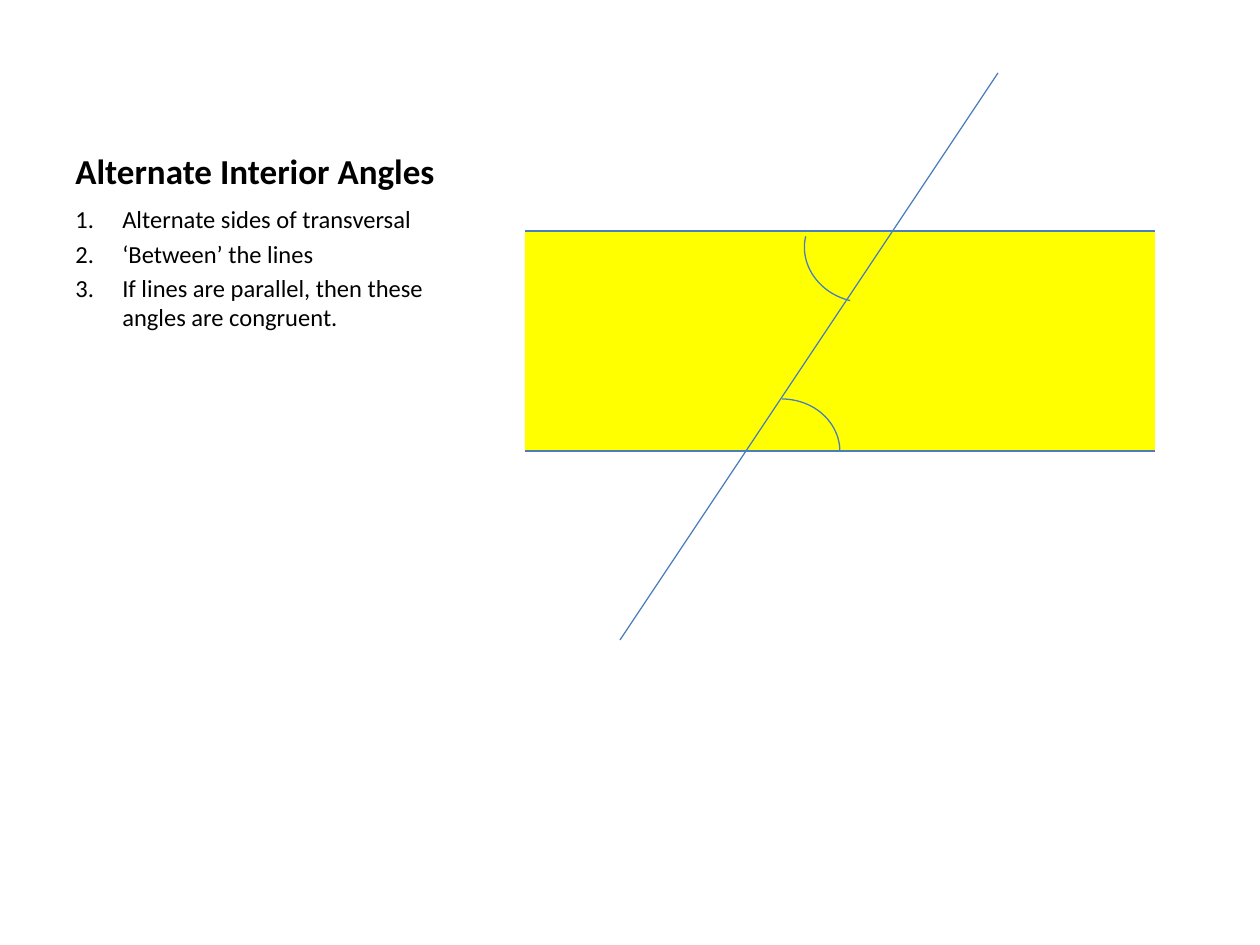
"""Build a slide on alternate interior angles."""
from typing import NamedTuple

from lxml.etree import SubElement
from pptx import Presentation
from pptx.dml.color import RGBColor as Color
from pptx.enum.shapes import MSO_CONNECTOR as Link, MSO_SHAPE as Kind
from pptx.enum.text import MSO_ANCHOR as Anchor
from pptx.oxml.ns import qn
from pptx.util import Emu, Pt

SCALE = 914400 / 126
FONT = "Calibri"
BLACK, BLUE, YELLOW = "000000", "4B7EBC", "FFFF00"
LEFT, RIGHT, TOP, BASE = 525, 1155, 231, 451


class Line(NamedTuple):
    x1: int
    y1: int
    x2: int
    y2: int


class Arc(NamedTuple):
    left: int
    top: int
    turn: float


LINES = [
    Line(LEFT, TOP, RIGHT, TOP),
    Line(LEFT, BASE, RIGHT, BASE),
    Line(620, 640, 998, 73),
]
ARCS = [Arc(724, 399, 0), Arc(804, 197, 193.1)]
RULES = [
    "Alternate sides of transversal",
    "‘Between’ the lines",
    "If lines are parallel, then these angles are congruent.",
]


def px(size: int) -> Emu:
    return Emu(round(size * SCALE))


def paint(code: str) -> Color:
    return Color.from_string(code)


def stroke(shape) -> None:
    shape.line.color.rgb = paint(BLUE)
    shape.line.width = Pt(0.75)


def draw_band(slide) -> None:
    band = slide.shapes.add_shape(
        Kind.RECTANGLE, px(LEFT), px(TOP), px(RIGHT - LEFT), px(BASE - TOP))
    band.shadow.inherit = False
    band.fill.solid()
    band.fill.fore_color.rgb = paint(YELLOW)
    band.line.fill.background()


def draw_line(slide, line: Line) -> None:
    link = slide.shapes.add_connector(Link.STRAIGHT, *map(px, line))
    stroke(link)
    SubElement(link._element.spPr, qn("a:effectLst"))


def draw_arc(slide, arc: Arc) -> None:
    shape = slide.shapes.add_shape(
        Kind.ARC, px(arc.left), px(arc.top), px(116), px(105))
    shape.shadow.inherit = False
    shape.fill.background()
    shape.rotation = arc.turn
    stroke(shape)


def add_box(slide, top: int, high: int, anchor: Anchor):
    frame = slide.shapes.add_textbox(px(63), px(top), px(415), px(high)).text_frame
    frame.word_wrap = True
    frame.vertical_anchor = anchor
    return frame


def add_run(para, text: str, size: int, bold: bool = False) -> None:
    run = para.add_run()
    run.text = text
    font = run.font
    font.name, font.size, font.bold = FONT, Pt(size), bold
    font.color.rgb = paint(BLACK)


def add_rules(frame, rules: list[str]) -> None:
    for index, rule in enumerate(rules):
        para = frame.add_paragraph() if index else frame.paragraphs[0]
        para.space_before = Pt(2.8)
        props = para._p.get_or_add_pPr()
        props.set("marL", str(px(47)))
        props.set("indent", str(-px(47)))
        SubElement(props, qn("a:buFont"), typeface="+mj-lt")
        SubElement(props, qn("a:buAutoNum"), type="arabicPeriod")
        add_run(para, rule, 14)


def main() -> None:
    deck = Presentation()
    deck.slide_width, deck.slide_height = px(1260), px(945)
    slide = deck.slides.add_slide(deck.slide_layouts[6])
    draw_band(slide)
    title = add_box(slide, 38, 160, Anchor.BOTTOM)
    add_run(title.paragraphs[0], "Alternate Interior Angles", 20, True)
    add_rules(add_box(slide, 198, 646, Anchor.TOP), RULES)
    for line in LINES:
        draw_line(slide, line)
    for arc in ARCS:
        draw_arc(slide, arc)
    deck.save("out.pptx")


if __name__ == "__main__":
    main()
